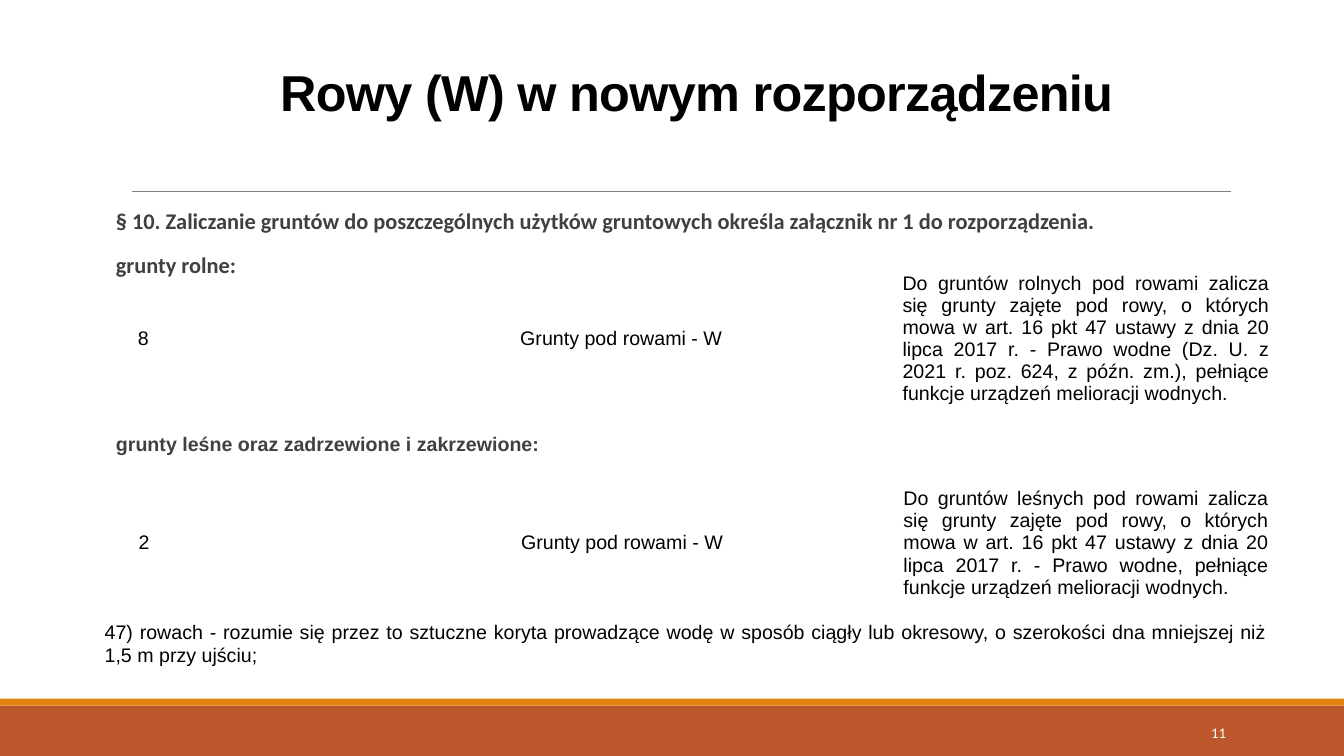
from lxml.etree import SubElement
from pptx import Presentation
from pptx.dml.color import RGBColor
from pptx.enum.shapes import MSO_CONNECTOR, MSO_SHAPE
from pptx.enum.text import MSO_ANCHOR, MSO_AUTO_SIZE, PP_ALIGN
from pptx.oxml.ns import qn
from pptx.util import Pt

RUST = RGBColor(0xBD, 0x58, 0x2C)
ORANGE = RGBColor(0xE4, 0x83, 0x12)
GRAY = RGBColor(0x80, 0x80, 0x80)
DARK = RGBColor(0x40, 0x40, 0x40)
BLACK = RGBColor(0, 0, 0)
WHITE = RGBColor(0xFF, 0xFF, 0xFF)

WIDTH, HEIGHT = 960, 540
FARM = (
    "8",
    "Grunty pod rowami - W",
    "Do gruntów rolnych pod rowami zalicza się grunty zajęte pod rowy, o których "
    "mowa w art. 16 pkt 47 ustawy z dnia 20 lipca 2017 r. - Prawo wodne (Dz. U. z "
    "2021 r. poz. 624, z późn. zm.), pełniące funkcje urządzeń melioracji wodnych.",
)
FOREST = (
    "2",
    "Grunty pod rowami - W",
    "Do gruntów leśnych pod rowami zalicza się grunty zajęte pod rowy, o których "
    "mowa w art. 16 pkt 47 ustawy z dnia 20 lipca 2017 r. - Prawo wodne, pełniące "
    "funkcje urządzeń melioracji wodnych.",
)
DITCH = (
    "47) rowach - rozumie się przez to sztuczne koryta prowadzące wodę w sposób "
    "ciągły lub okresowy, o szerokości dna mniejszej niż 1,5 m przy ujściu;"
)
# text, size, font, space before
HEADS = (
    ("§ 10. Zaliczanie gruntów do poszczególnych użytków gruntowych określa "
     "załącznik nr 1 do rozporządzenia.", 16, "Calibri", 12),
    ("grunty rolne:", 16, "Calibri", 12),
    ("grunty leśne oraz zadrzewione i zakrzewione:", 14, "Arial", 110),
)


def style(para, size, face, color, bold=False, align=PP_ALIGN.LEFT):
    para.alignment = align
    for run in para.runs:
        font = run.font
        font.size, font.name, font.bold = Pt(size), face, bold
        font.color.rgb = color


def place(shape, x, y, w, h):
    shape.left, shape.top = Pt(x), Pt(y)
    shape.width, shape.height = Pt(w), Pt(h)


def add_band(slide, x, y, w, h, color):
    band = slide.shapes.add_shape(MSO_SHAPE.RECTANGLE, Pt(x), Pt(y), Pt(w), Pt(h))
    band.shadow.inherit = False
    band.fill.solid()
    band.fill.fore_color.rgb = color
    band.line.fill.background()


def add_rule(slide, x, y, w):
    rule = slide.shapes.add_connector(
        MSO_CONNECTOR.STRAIGHT, Pt(x), Pt(y), Pt(x + w), Pt(y))
    rule.line.color.rgb = GRAY
    rule.line.width = Pt(0.5)
    SubElement(rule._element.spPr, qn("a:effectLst"))


def set_title(slide, x, y, w, h):
    title = slide.shapes.title
    place(title, x, y, w, h)
    frame = title.text_frame
    frame.text = "Rowy (W) w nowym rozporządzeniu"
    frame.auto_size = MSO_AUTO_SIZE.NONE
    frame.vertical_anchor = MSO_ANCHOR.BOTTOM
    para = frame.paragraphs[0]
    style(para, 36, "Arial", BLACK, True, PP_ALIGN.CENTER)
    para.line_spacing = 0.85
    para.runs[0].font._element.set("spc", "-50")


def set_body(slide, x, y, w, h):
    body = slide.placeholders[1]
    place(body, x, y, w, h)
    frame = body.text_frame
    frame.text = "\n".join(head[0] for head in HEADS)
    frame.auto_size = MSO_AUTO_SIZE.NONE
    frame.vertical_anchor = MSO_ANCHOR.TOP
    frame.margin_left = frame.margin_right = 0
    for para, (_, size, face, gap) in zip(frame.paragraphs, HEADS):
        style(para, size, face, DARK, True)
        para.line_spacing = 0.9
        para.space_before, para.space_after = Pt(gap), Pt(2)
        props = para._p.get_or_add_pPr()
        props.set("marL", "0")
        props.set("indent", "0")
        SubElement(props, qn("a:buNone"))


def clear_cell(cell):
    """Remove the borders and the fill that the table style gives."""
    props = cell._tc.get_or_add_tcPr()
    for side in ("lnL", "lnR", "lnT", "lnB"):
        edge = SubElement(props, qn(f"a:{side}"), w="0")
        SubElement(edge, qn("a:noFill"))
    cell.fill.background()


def add_row(slide, x, y, w, h, texts, pad):
    """Place a one-row table without borders or fills, with equal columns."""
    frame = slide.shapes.add_table(1, len(texts), Pt(x), Pt(y), Pt(w), Pt(h))
    table = frame.table
    table.first_row = table.horz_banding = False
    for cell, text in zip(table.iter_cells(), texts):
        clear_cell(cell)
        cell.vertical_anchor = MSO_ANCHOR.MIDDLE
        cell.margin_left = cell.margin_right = Pt(pad)
        cell.margin_top = cell.margin_bottom = Pt(3)
        cell.text_frame.text = text
        style(cell.text_frame.paragraphs[0], 14, "Arial", BLACK,
              align=PP_ALIGN.JUSTIFY)


def add_note(slide, x, y, w, h, text):
    frame = slide.shapes.add_textbox(Pt(x), Pt(y), Pt(w), Pt(h)).text_frame
    frame.word_wrap = True
    frame.text = text
    style(frame.paragraphs[0], 14, "Arial", BLACK, align=PP_ALIGN.JUSTIFY)


def add_number(slide, x, y, w, h, text):
    frame = slide.shapes.add_textbox(Pt(x), Pt(y), Pt(w), Pt(h)).text_frame
    frame.word_wrap = True
    frame.vertical_anchor = MSO_ANCHOR.MIDDLE
    frame.text = text
    style(frame.paragraphs[0], 10.5, "Calibri", WHITE, align=PP_ALIGN.RIGHT)


def main():
    deck = Presentation()
    deck.slide_width, deck.slide_height = Pt(WIDTH), Pt(HEIGHT)
    slide = deck.slides.add_slide(deck.slide_layouts[1])
    add_band(slide, 0, 504, WIDTH, 36, RUST)
    add_band(slide, 0, 499, WIDTH, 5, ORANGE)
    add_rule(slide, 94.3, 136.8, 784.8)
    set_title(slide, 82.8, 34.2, 829.4, 56.2)
    set_body(slide, 82.8, 146.5, 853.2, 333.4)
    add_row(slide, 92.9, 192, 819.4, 88, FARM, 5.6)
    add_row(slide, 92.9, 343, 819.4, 90, FOREST, 6.2)
    add_note(slide, 67.7, 439.2, 844.6, 41, DITCH)
    add_number(slide, 779.8, 508.6, 103, 28.8, "11")
    deck.save("out.pptx")


if __name__ == "__main__":
    main()
